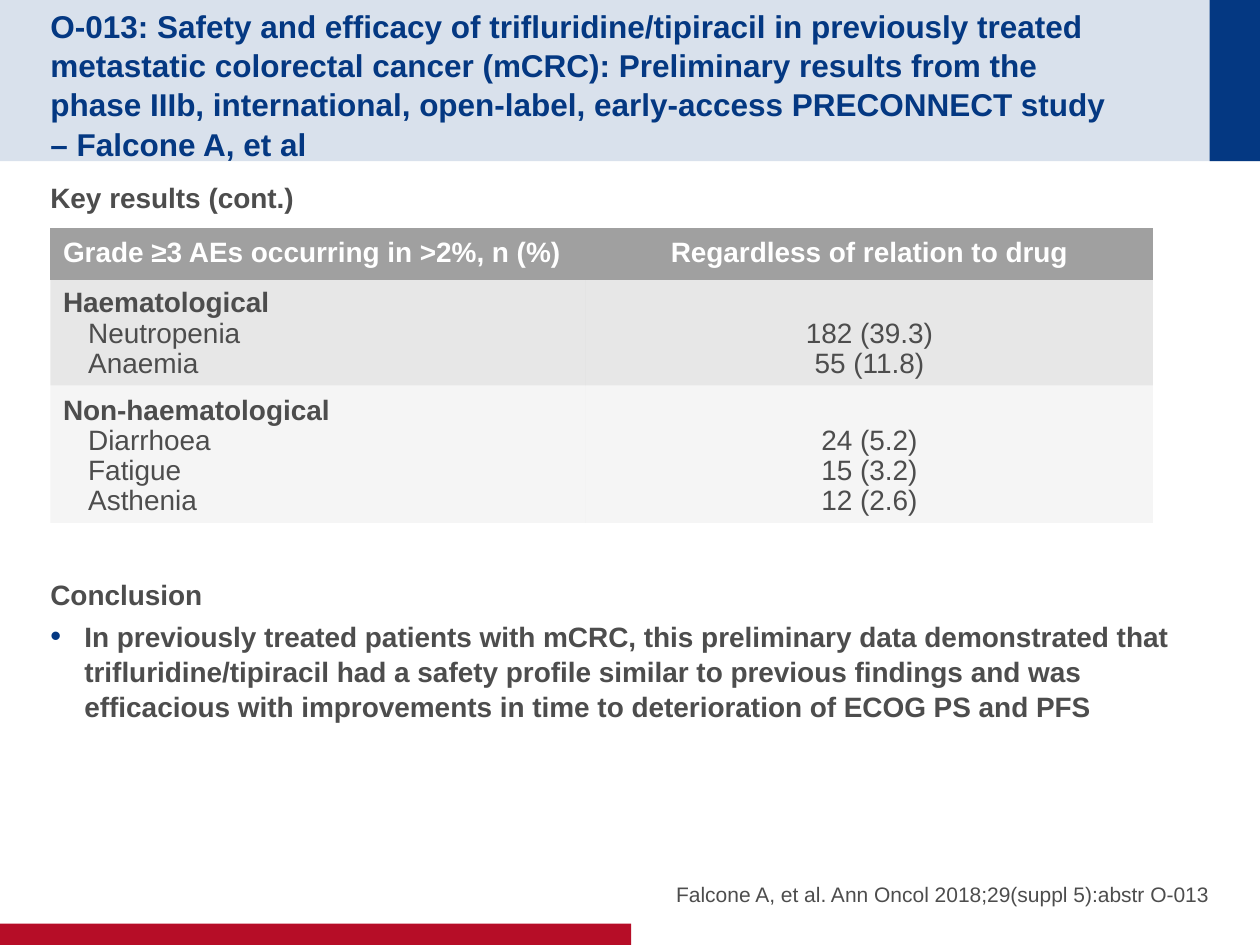
from lxml.etree import SubElement
from pptx import Presentation
from pptx.dml.color import RGBColor
from pptx.enum.shapes import MSO_SHAPE
from pptx.enum.text import MSO_ANCHOR, MSO_AUTO_SIZE, PP_ALIGN
from pptx.oxml.ns import qn
from pptx.util import Inches, Pt

NAVY, RED, TEXT, GREY, WHITE = "043882", "B60D27", "4D4D4D", "A0A0A0", "FFFFFF"
NO_STYLE = "{2D5ABB26-0587-4C30-8999-92F81FD0307C}"
TABLE_SPACING, BODY_SPACING = 0.97, 1.04


def color(value):
    return RGBColor.from_string(value)


def set_fill(target, value, opacity=100):
    target.fill.solid()
    target.fill.fore_color.rgb = color(value)
    if opacity < 100:
        properties = target.fill._xPr
        rgb = properties.find(qn("a:solidFill")).find(qn("a:srgbClr"))
        SubElement(rgb, qn("a:alpha"), val=str(opacity * 1000))


def add_band(slide, box, value, opacity=100):
    shape = slide.shapes.add_shape(MSO_SHAPE.RECTANGLE, *map(Inches, box))
    shape.shadow.inherit = False
    shape.line.fill.background()
    set_fill(shape, value, opacity)


def write_paragraph(paragraph, text, size=16, bold=False, value=TEXT, **formats):
    paragraph.text = text
    for run in paragraph.runs:
        for name, setting in {"name": "Arial", "size": Pt(size), "bold": bold}.items():
            setattr(run.font, name, setting)
        run.font.color.rgb = color(value)
    for name, setting in formats.items():
        setattr(paragraph, name, setting)


def set_frame(frame, anchor, top=0.05, bottom=0.05):
    formats = {
        "word_wrap": True, "auto_size": MSO_AUTO_SIZE.NONE, "vertical_anchor": anchor,
        "margin_left": 0, "margin_right": 0,
        "margin_top": Inches(top), "margin_bottom": Inches(bottom),
    }
    for name, setting in formats.items():
        setattr(frame, name, setting)


def add_text_box(slide, box, anchor, **margins):
    frame = slide.shapes.add_textbox(*map(Inches, box)).text_frame
    set_frame(frame, anchor, **margins)
    return frame


def add_bullet(paragraph, indent):
    properties = paragraph._p.get_or_add_pPr()
    properties.set("marL", str(Inches(indent)))
    properties.set("indent", str(-Inches(indent)))
    SubElement(SubElement(properties, qn("a:buClr")), qn("a:srgbClr"), val=NAVY)
    SubElement(properties, qn("a:buSzPct"), val="110000")
    SubElement(properties, qn("a:buFont"), typeface="Arial")
    SubElement(properties, qn("a:buChar"), char="•")


def set_title(slide, text):
    title = slide.shapes.title
    box = {"left": 0.4, "top": 0.2, "width": 9.01, "height": 0.88}
    for name, length in box.items():
        setattr(title, name, Inches(length))
    set_frame(title.text_frame, MSO_ANCHOR.MIDDLE, bottom=0)
    write_paragraph(title.text_frame.paragraphs[0], text, 18, True, NAVY,
                    alignment=PP_ALIGN.LEFT, line_spacing=BODY_SPACING)


def fill_cell(cell, lines, anchor, opacity=100):
    """Each line is a text with its paragraph formats."""
    set_fill(cell, GREY, opacity)
    cell.vertical_anchor = anchor
    frame = cell.text_frame
    for index, (text, formats) in enumerate(lines):
        paragraph = frame.add_paragraph() if index else frame.paragraphs[0]
        write_paragraph(paragraph, text, line_spacing=TABLE_SPACING, **formats)


def add_event_table(slide, headings, groups):
    widths, heights = (4.25, 4.5), (0.41, 0.84, 1.09)
    table = slide.shapes.add_table(
        len(heights), len(widths), Inches(0.4), Inches(1.81),
        Inches(sum(widths)), Inches(sum(heights))).table
    table.first_row = table.horz_banding = False
    table._tbl.tblPr.find(qn("a:tableStyleId")).text = NO_STYLE
    for column, width in zip(table.columns, widths):
        column.width = Inches(width)
    for row, height in zip(table.rows, heights):
        row.height = Inches(height)

    for column, (text, alignment) in enumerate(zip(headings, (PP_ALIGN.LEFT, PP_ALIGN.CENTER))):
        formats = {"bold": True, "value": WHITE, "alignment": alignment}
        fill_cell(table.cell(0, column), [(text, formats)], MSO_ANCHOR.MIDDLE)

    for row, (group, opacity, events) in enumerate(groups, start=1):
        names = [(group, {"bold": True})] + [(name, {}) for name, _ in events]
        counts = [(count, {"alignment": PP_ALIGN.CENTER}) for _, count in events]
        # Bottom anchoring keeps each count level with its event
        for column, lines in enumerate((names, counts)):
            fill_cell(table.cell(row, column), lines, MSO_ANCHOR.BOTTOM, opacity)
        for paragraph in table.cell(row, 0).text_frame.paragraphs[1:]:
            paragraph._p.get_or_add_pPr().set("marL", str(Inches(0.2)))


def main():
    presentation = Presentation()
    presentation.slide_width, presentation.slide_height = Inches(10), Inches(7.5)
    slide = presentation.slides.add_slide(presentation.slide_layouts[5])

    # Header and footer bands, behind the title
    add_band(slide, (0, 0, 10, 1.28), NAVY, opacity=15)
    add_band(slide, (9.6, 0, 0.4, 1.28), NAVY)
    add_band(slide, (0, 7.33, 5.01, 0.17), RED)
    title_element = slide.shapes.title._element
    title_element.getparent().append(title_element)
    set_title(slide, "O-013: Safety and efficacy of trifluridine/tipiracil in previously "
                     "treated metastatic colorectal cancer (mCRC): Preliminary results from the\v"
                     "phase IIIb, international, open-label, early-access PRECONNECT study\v"
                     "– Falcone A, et al")

    # Headings and conclusion, with room for the table between them
    body = add_text_box(slide, (0.4, 1.37, 9.2, 5.19), MSO_ANCHOR.TOP)
    paragraphs = [
        ("Key results (cont.)", 0),
        ("Conclusion", 203),
        ("In previously treated patients with mCRC, this preliminary data demonstrated that "
         "trifluridine/tipiracil had a safety profile similar to previous findings and was "
         "efficacious with improvements in time to deterioration of ECOG PS and PFS", 0),
    ]
    for index, (text, space) in enumerate(paragraphs):
        paragraph = body.add_paragraph() if index else body.paragraphs[0]
        write_paragraph(paragraph, text, bold=True, space_before=Pt(space),
                        space_after=Pt(4), line_spacing=BODY_SPACING)
    add_bullet(body.paragraphs[-1], 0.27)

    # Citation
    citation = add_text_box(slide, (5.08, 6.67, 4.52, 0.53), MSO_ANCHOR.BOTTOM, top=0, bottom=0)
    write_paragraph(citation.paragraphs[0],
                    "Falcone A, et al. Ann Oncol 2018;29(suppl 5):abstr O-013",
                    12, alignment=PP_ALIGN.RIGHT, space_after=Pt(4))

    # Adverse events
    add_event_table(
        slide,
        ("Grade ≥3 AEs occurring in >2%, n (%)", "Regardless of relation to drug"),
        [
            ("Haematological", 25,
             [("Neutropenia", "182 (39.3)"), ("Anaemia", "55 (11.8)")]),
            ("Non-haematological", 10,
             [("Diarrhoea", "24 (5.2)"), ("Fatigue", "15 (3.2)"), ("Asthenia", "12 (2.6)")]),
        ])

    presentation.save("out.pptx")


if __name__ == "__main__":
    main()
